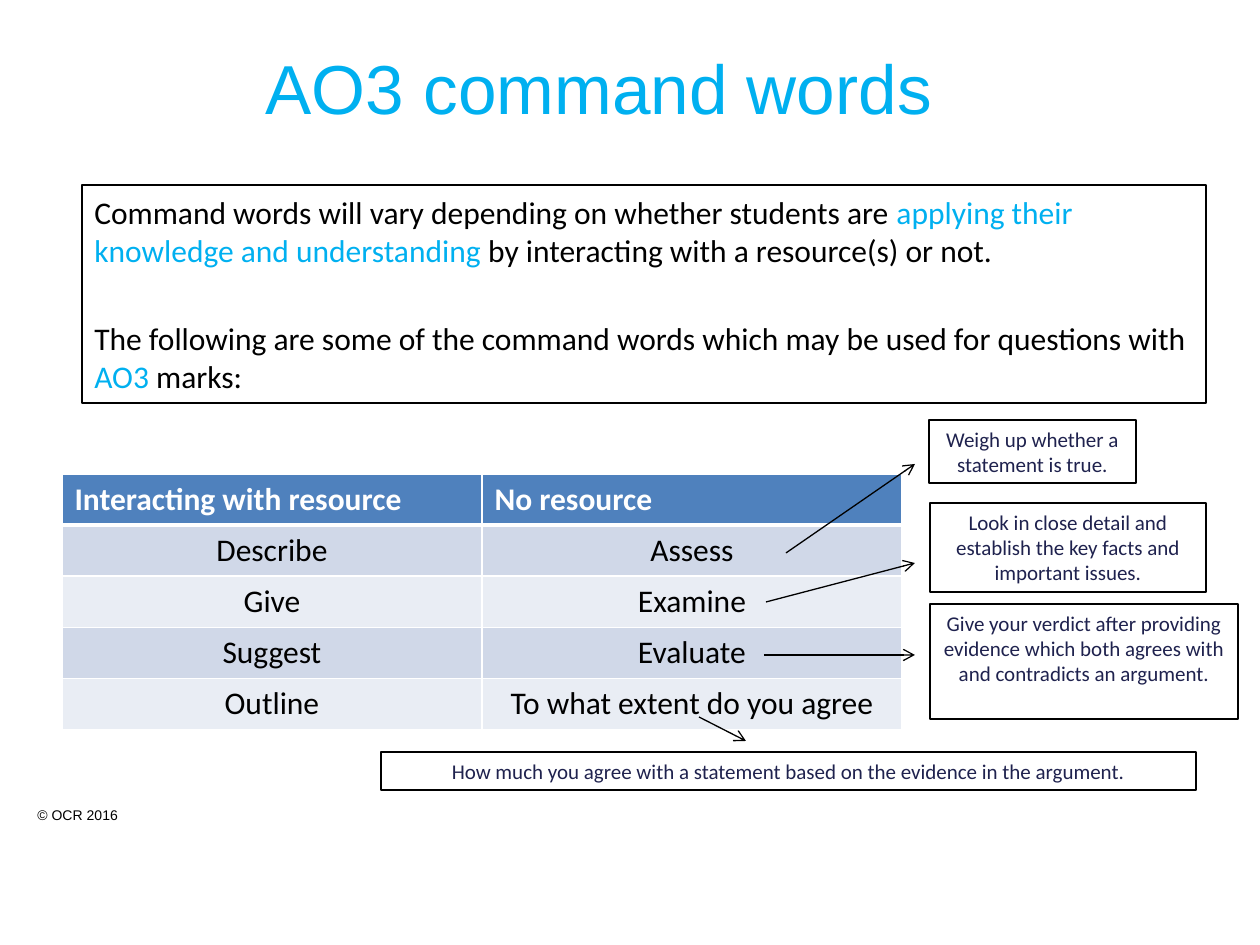
from lxml import etree
from pptx import Presentation
from pptx.dml.color import RGBColor
from pptx.enum.shapes import MSO_CONNECTOR, MSO_SHAPE
from pptx.enum.text import MSO_ANCHOR, PP_ALIGN
from pptx.oxml.ns import qn
from pptx.util import Pt

PX = 914400 // 126
RECTANGLE = MSO_SHAPE.RECTANGLE
STRAIGHT = MSO_CONNECTOR.STRAIGHT
TOP, MIDDLE = MSO_ANCHOR.TOP, MSO_ANCHOR.MIDDLE
LEFT, CENTER = PP_ALIGN.LEFT, PP_ALIGN.CENTER
BLACK = RGBColor(0x00, 0x00, 0x00)
WHITE = RGBColor(0xFF, 0xFF, 0xFF)
SKY = RGBColor(0x00, 0xB0, 0xF0)
NAVY = RGBColor(0x1F, 0x22, 0x4E)
HEADER_BLUE = RGBColor(0x4F, 0x81, 0xBD)
BANDS = [RGBColor(0xD0, 0xD8, 0xE8), RGBColor(0xE9, 0xED, 0xF4)]

TITLE = {"size": Pt(39.6), "name": "Arial"}
FOOTER = {"size": Pt(8), "name": "Arial"}
BODY = {"size": Pt(18), "name": "Calibri", "bold": False}
HEADING = {"size": Pt(18), "name": "Calibri", "bold": True}
NOTE = {"size": Pt(12), "name": "Calibri"}


def write(paragraph, pieces, font_format, align=LEFT):
    paragraph.alignment = align
    for text, color in pieces:
        run = paragraph.add_run()
        run.text = text
        for attribute, value in font_format.items():
            setattr(run.font, attribute, value)
        run.font.color.rgb = color


def add_box(left, top, width, height, outlined=True, anchor=TOP):
    box = slide.shapes.add_shape(RECTANGLE, left * PX, top * PX, width * PX, height * PX)
    box.shadow.inherit = False
    box.fill.background()
    if outlined:
        box.line.color.rgb = BLACK
        box.line.width = Pt(0.75)
    else:
        box.line.fill.background()
    box.text_frame.word_wrap = True
    box.text_frame.vertical_anchor = anchor
    return box


presentation = Presentation()
presentation.slide_width = 1260 * PX
presentation.slide_height = 945 * PX
slide = presentation.slides.add_slide(presentation.slide_layouts[6])

copyright_line = add_box(25, 800, 238, 30, outlined=False)
write(copyright_line.text_frame.paragraphs[0], [("© OCR 2016", BLACK)], FOOTER)

title = add_box(0, 37, 1198, 100, outlined=False, anchor=MIDDLE)
write(title.text_frame.paragraphs[0], [("AO3 command words", SKY)], TITLE, CENTER)

introduction = add_box(82, 185, 1124, 218).text_frame
introduction.margin_top = 8 * PX
write(introduction.paragraphs[0], [
    ("Command words will vary depending on whether students are ", BLACK),
    ("applying their knowledge and understanding", SKY),
    (" by interacting with a resource(s) or not.", BLACK),
], BODY)
list_lead = introduction.add_paragraph()
list_lead.space_before = Pt(29)
write(list_lead, [
    ("The following are some of the command words which may be used for questions with ", BLACK),
    ("AO3 ", SKY),
    ("marks:", BLACK),
], BODY)

command_words = [
    ("Interacting with resource", "No resource"),
    ("Describe", "Assess"),
    ("Give", "Examine"),
    ("Suggest", "Evaluate"),
    ("Outline", "To what extent do you agree"),
]
ROW_HEIGHT, COLUMN_WIDTH = 51, 420
word_table = slide.shapes.add_table(
    len(command_words), 2, 62 * PX, 474 * PX,
    2 * COLUMN_WIDTH * PX, len(command_words) * ROW_HEIGHT * PX).table
for column in word_table.columns:
    column.width = COLUMN_WIDTH * PX
for row_index, words in enumerate(command_words):
    is_header = row_index == 0
    word_table.rows[row_index].height = ROW_HEIGHT * PX
    for column_index, word in enumerate(words):
        cell = word_table.cell(row_index, column_index)
        properties = cell._tc.get_or_add_tcPr()
        for side in ("lnL", "lnR", "lnT", "lnB"):
            thick = (is_header and side == "lnB") or (row_index == 1 and side == "lnT")
            border = etree.SubElement(properties, qn(f"a:{side}"), w=str(Pt(3 if thick else 1)))
            border_fill = etree.SubElement(border, qn("a:solidFill"))
            etree.SubElement(border_fill, qn("a:srgbClr"), val=str(WHITE))
        cell.fill.solid()
        cell.fill.fore_color.rgb = HEADER_BLUE if is_header else BANDS[(row_index - 1) % 2]
        write(cell.text_frame.paragraphs[0], [(word, WHITE if is_header else BLACK)],
              HEADING if is_header else BODY, LEFT if is_header else CENTER)

definitions = [
    ((929, 420, 207, 63), "Weigh up whether a statement is true."),
    ((930, 503, 276, 89), "Look in close detail and establish the key facts and important issues."),
    ((930, 604, 308, 115),
     "Give your verdict after providing evidence which both agrees with and contradicts an argument."),
    ((381, 752, 815, 38),
     "How much you agree with a statement based on the evidence in the argument."),
]
for bounds, meaning in definitions:
    definition = add_box(*bounds)
    write(definition.text_frame.paragraphs[0], [(meaning, NAVY)], NOTE, CENTER)
definition.fill.solid()
definition.fill.fore_color.rgb = WHITE

arrows = [
    (786, 553, 915, 464),
    (766, 602, 915, 563),
    (764, 655, 915, 655),
    (699, 717, 746, 741),
]
for ends in arrows:
    arrow = slide.shapes.add_connector(STRAIGHT, *(end * PX for end in ends))
    arrow.line.color.rgb = BLACK
    arrow.line.width = Pt(0.75)
    etree.SubElement(arrow.line._get_or_add_ln(), qn("a:tailEnd"), type="arrow")
    etree.SubElement(arrow._element.spPr, qn("a:effectLst"))

presentation.save("out.pptx")
